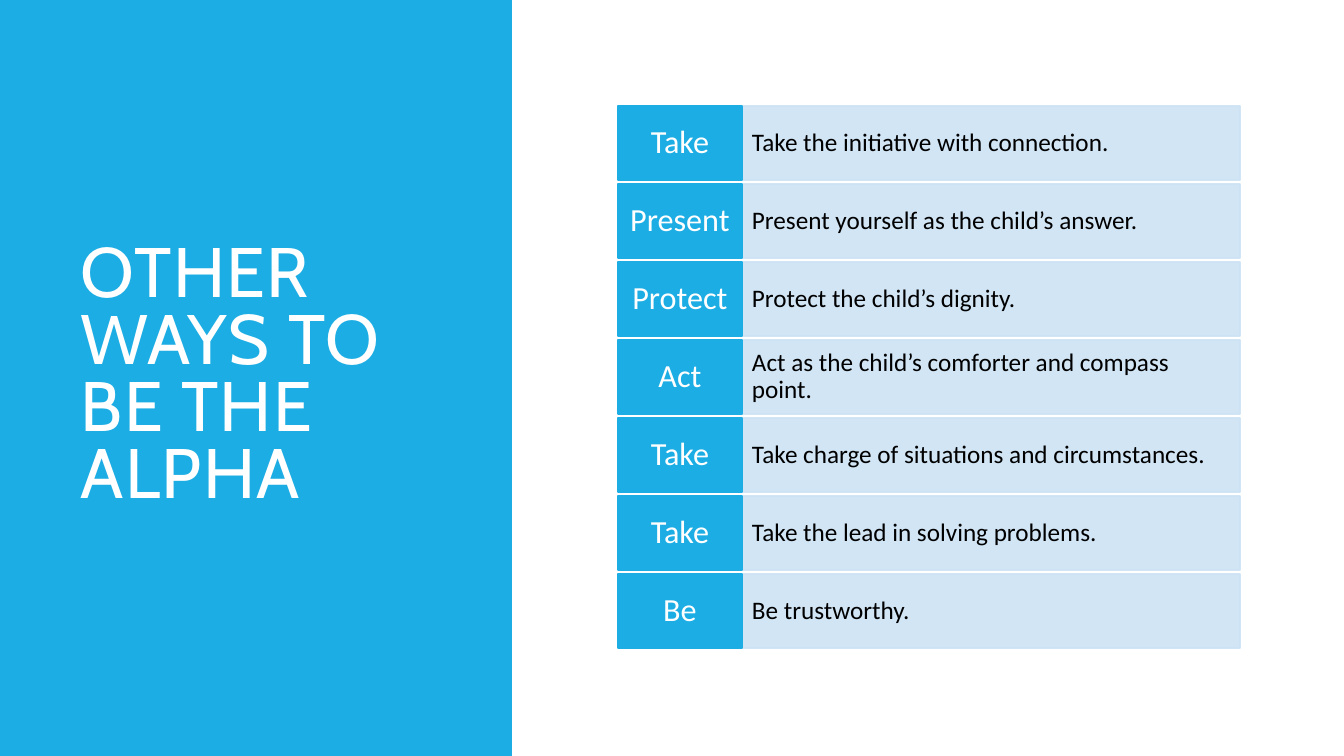
from lxml.etree import SubElement
from pptx import Presentation
from pptx.dml.color import RGBColor
from pptx.enum.shapes import MSO_SHAPE
from pptx.enum.text import MSO_ANCHOR, PP_ALIGN
from pptx.oxml.ns import qn
from pptx.util import Emu, Pt

BLUE, PALE, WHITE, BLACK = "1CADE4", "CDE3F5", "FFFFFF", "000000"
ROWS = [
    ("Take", "Take the initiative with connection."),
    ("Present", "Present yourself as the child’s answer."),
    ("Protect", "Protect the child’s dignity."),
    ("Act", "Act as the child’s comforter and compass point."),
    ("Take", "Take charge of situations and circumstances."),
    ("Take", "Take the lead in solving problems."),
    ("Be", "Be trustworthy."),
]


def px(n):
    return Emu(round(n * 914400 / 100.8))


def rgb(value):
    return RGBColor.from_string(value)


class Deck:
    def __init__(self, width, height):
        self.prs = Presentation()
        self.prs.slide_width, self.prs.slide_height = px(width), px(height)
        self.s = self.prs.slides.add_slide(self.prs.slide_layouts[6])

    def rect(self, box, color, outlined=False, alpha=100):
        sp = self.s.shapes.add_shape(MSO_SHAPE.RECTANGLE, *map(px, box))
        sp.shadow.inherit = False
        sp.fill.solid()
        sp.fill.fore_color.rgb = rgb(color)
        if outlined:
            sp.line.color.rgb = rgb(color)
            sp.line.width = Pt(1.25)
        else:
            sp.line.fill.background()
        if alpha < 100:
            for clr in sp._element.spPr.iter(qn("a:srgbClr")):
                SubElement(clr, qn("a:alpha"), val=str(alpha * 1000))
        return sp

    def text(self, sp, words, size, color, font="Calibri", align=PP_ALIGN.LEFT,
             inset=(10, 5), leading=0.9, tracking=0):
        tf = sp.text_frame
        tf.word_wrap = True
        tf.vertical_anchor = MSO_ANCHOR.MIDDLE
        tf.margin_left = tf.margin_right = px(inset[0])
        tf.margin_top = tf.margin_bottom = px(inset[1])
        p = tf.paragraphs[0]
        p.alignment = align
        p.line_spacing = leading
        r = p.add_run()
        r.text = words
        r.font.name, r.font.size = font, Pt(size)
        r.font.color.rgb = rgb(color)
        if tracking:
            r.font._element.set("spc", str(tracking * 100))

    def title(self, box, words):
        sp = self.s.shapes.add_textbox(*map(px, box))
        self.text(sp, words, 50, WHITE, "Cabin", leading=0.8, tracking=1)

    def row(self, top, label, detail):
        sp = self.rect((742, top, 498, 74), PALE, True, 90)
        self.text(sp, detail, 18, BLACK, inset=(10, 19))
        sp = self.rect((618, top, 124, 74), BLUE, True)
        self.text(sp, label, 23, WHITE, align=PP_ALIGN.CENTER, inset=(7, 7))


def main():
    deck = Deck(1344, 756)
    deck.rect((0, 0, 512, 756), BLUE)
    deck.title((71, 71, 377, 614), "OTHER WAYS TO BE THE ALPHA")
    for i, (label, detail) in enumerate(ROWS):
        deck.row(106 + 78 * i, label, detail)
    deck.prs.save("out.pptx")


if __name__ == "__main__":
    main()
